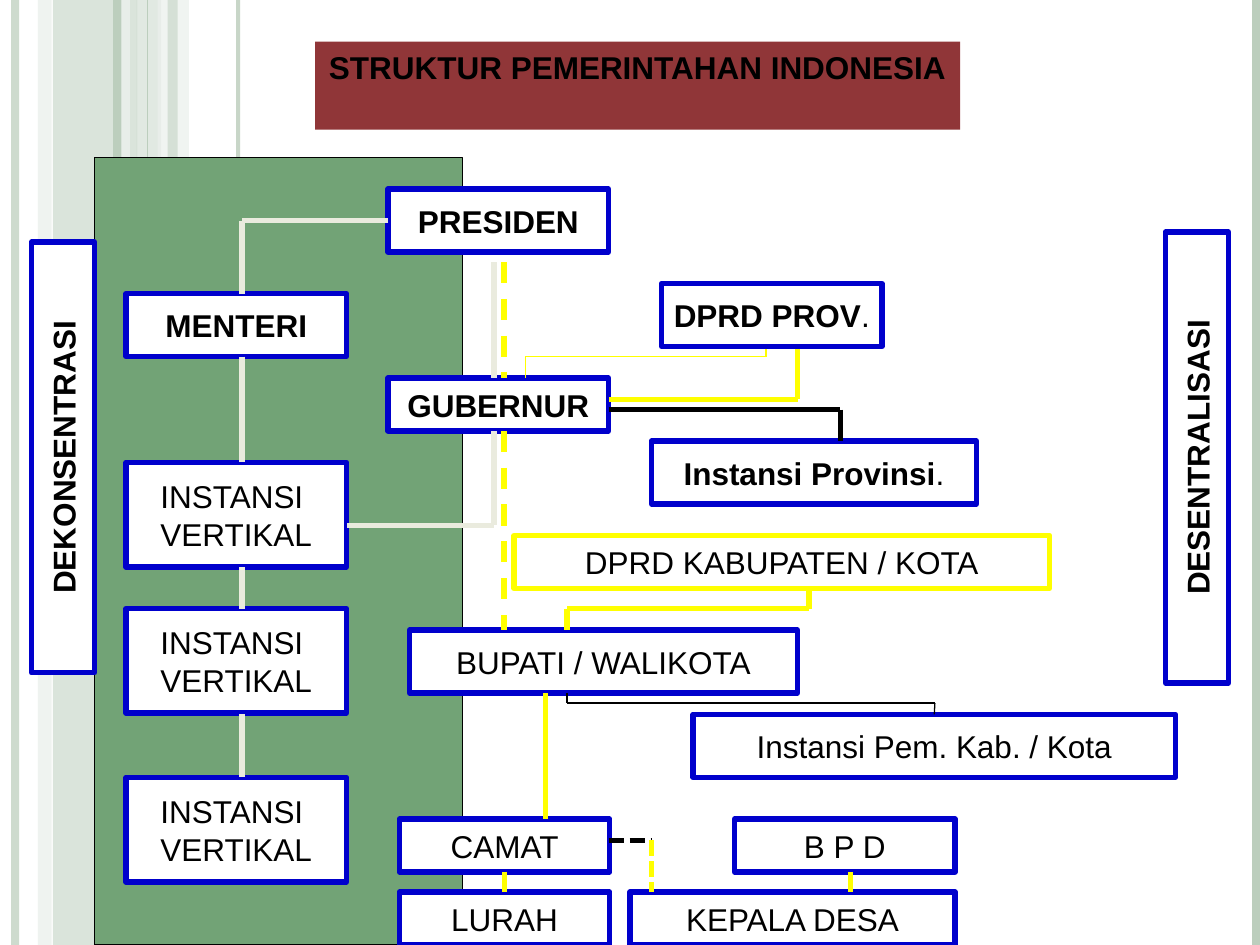
from itertools import pairwise
from typing import NamedTuple

from lxml.etree import SubElement
from pptx import Presentation
from pptx.dml.color import RGBColor
from pptx.enum.dml import MSO_LINE_DASH_STYLE as Dash
from pptx.enum.shapes import MSO_CONNECTOR as Connector, MSO_SHAPE as Shape
from pptx.enum.text import MSO_ANCHOR as Anchor, PP_ALIGN as Align
from pptx.oxml.ns import qn
from pptx.util import Inches, Pt

COLORS = {
    "sage": "BCCEBD", "light sage": "D5E0D6", "pale sage": "EBF0EC",
    "green": "72A376", "maroon": "903638", "blue": "0000CC",
    "yellow": "FFFF00", "cream": "EAEBDE", "white": "FFFFFF", "black": "000000",
}
TOP, LEFT, BOTTOM = 0, 1, 2
SLIDE_HEIGHT = 7.5


class Band(NamedTuple):
    left: float
    width: float
    color: str
    opacity: int


class Stripe(NamedTuple):
    x: float
    color: str
    weight: float = 4.5
    opacity: int = 100


class Box(NamedTuple):
    text: str
    left: float
    top: float
    width: float
    height: float = 0.5
    bold: bool = False
    border: str | None = "blue"
    fill: str = "white"
    rotation: int = 0
    weight: float = 3
    anchor: Anchor = Anchor.MIDDLE


class Route(NamedTuple):
    """A chain of straight connectors; start and end name a box and its side."""
    points: list
    color: str
    weight: float = 3
    dash: Dash | None = None
    start: tuple | None = None
    end: tuple | None = None


BANDS = [
    Band(0.42, 0.67, "sage", 54),
    Band(0.3, 0.11, "light sage", 36),
    Band(1.08, 0.2, "light sage", 70),
    Band(1.25, 0.25, "pale sage", 71),
]
STRIPES = [
    Stripe(0.12, "sage", opacity=73),
    Stripe(1, "pale sage", opacity=83),
    Stripe(0.93, "sage"),
    Stripe(1.89, "sage", 2.25, 82),
    Stripe(1.17, "sage", 0.75),
    Stripe(9.97, "sage"),
]
FRONT_BAND = Band(1.33, 0.08, "sage", 51)

BOXES = [
    Box("", 0.75, 1.25, 2.92, 6.25, border="black", fill="green", weight=0.75),
    Box("STRUKTUR PEMERINTAHAN INDONESIA", 2.5, 0.33, 5.12, 0.7, bold=True,
        border=None, fill="maroon", anchor=Anchor.TOP),
    Box("MENTERI", 1, 2.33, 1.75, bold=True),
    Box("Instansi Pem. Kab. / Kota", 5.5, 5.67, 3.83),
    *[Box("INSTANSI \nVERTIKAL", 1, top, 1.75, 0.83) for top in (3.67, 4.83, 6.17)],
    Box("PRESIDEN", 3.08, 1.5, 1.75, bold=True),
    Box("GUBERNUR", 3.08, 3, 1.75, 0.42, bold=True),
    Box("CAMAT", 3.17, 6.5, 1.67, 0.42),
    Box("LURAH", 3.17, 7.08, 1.67, 0.42),
    Box("DEKONSENTRASI", -1.21, 3.38, 3.42, bold=True, rotation=270),
    Box("Instansi Provinsi.", 5.17, 3.5, 2.58, bold=True),
    Box("B P D", 5.83, 6.5, 1.75, 0.42),
    Box("BUPATI / WALIKOTA", 3.25, 5, 3.08),
    Box("DESENTRALISASI", 7.71, 3.38, 3.58, bold=True, rotation=270),
    Box("KEPALA DESA", 5, 7.08, 2.58, 0.42),
]
FRONT_BOXES = [
    Box("DPRD KABUPATEN / KOTA", 4.08, 4.25, 4.25, 0.42, border="yellow"),
    Box("DPRD PROV.", 5.25, 2.25, 1.75, bold=True),
]
ROUTES = [
    Route([(3.08, 1.75), (1.92, 1.75), (1.92, 2.33)], "cream", start=("PRESIDEN", LEFT)),
    *[Route([(1.92, top), (1.92, bottom)], "cream")
      for top, bottom in ((2.83, 3.67), (4.5, 4.83), (5.67, 6.17))],
    Route([(3.92, 2.08), (3.92, 3)], "cream"),
    Route([(3.92, 3.42), (3.92, 4.17), (2.75, 4.17)], "cream"),
    Route([(6.33, 2.75), (6.33, 3.17), (4.83, 3.17)], "yellow"),
    Route([(6.08, 2.75), (6.08, 2.83), (4.17, 2.83), (4.17, 3)], "yellow", 0.75),
    Route([(4.83, 3.25), (6.67, 3.25), (6.67, 3.5)], "black"),
    Route([(6.42, 4.67), (6.42, 4.83), (4.5, 4.83), (4.5, 5)], "yellow"),
    Route([(4, 6.92), (4, 7.08)], "yellow", start=("CAMAT", BOTTOM), end=("LURAH", TOP)),
    Route([(4.5, 5.5), (4.5, 5.58), (7.42, 5.58), (7.42, 5.67)], "black", 0.75,
          end=("Instansi Pem. Kab. / Kota", TOP)),
    Route([(6.75, 6.92), (6.75, 7.08)], "yellow"),
    Route([(4.83, 6.67), (5.17, 6.67)], "black", dash=Dash.SQUARE_DOT),
    Route([(5.17, 6.67), (5.17, 7.08)], "yellow", dash=Dash.SQUARE_DOT),
    Route([(4.33, 5.5), (4.33, 6.5)], "yellow"),
    Route([(4, 2.08), (4, 3)], "yellow", dash=Dash.DASH),
    Route([(4, 3.42), (4, 5)], "yellow", dash=Dash.DASH),
]


def rgb(name: str) -> RGBColor:
    return RGBColor.from_string(COLORS[name])


def apply_format(target, values: dict) -> None:
    for name, value in values.items():
        setattr(target, name, value)


def set_opacity(shape, percent: int) -> None:
    for color in shape._element.spPr.iter(qn("a:srgbClr")):
        SubElement(color, qn("a:alpha"), val=str(percent * 1000))


def add_rectangle(slide, left: float, top: float, width: float, height: float, fill: str):
    shape = slide.shapes.add_shape(
        Shape.RECTANGLE, Inches(left), Inches(top), Inches(width), Inches(height))
    shape.shadow.inherit = False
    shape.fill.solid()
    shape.fill.fore_color.rgb = rgb(fill)
    shape.line.fill.background()
    return shape


def add_line(slide, start: tuple, end: tuple, color: str, weight: float):
    line = slide.shapes.add_connector(
        Connector.STRAIGHT, *[Inches(value) for value in (*start, *end)])
    line.line.color.rgb = rgb(color)
    line.line.width = Pt(weight)
    SubElement(line._element.spPr, qn("a:effectLst"))
    return line


def add_band(slide, band: Band) -> None:
    shape = add_rectangle(slide, band.left, 0, band.width, SLIDE_HEIGHT, band.color)
    set_opacity(shape, band.opacity)


def add_stripe(slide, stripe: Stripe) -> None:
    line = add_line(slide, (stripe.x, 0), (stripe.x, SLIDE_HEIGHT), stripe.color, stripe.weight)
    if stripe.opacity < 100:
        set_opacity(line, stripe.opacity)


def add_box(slide, box: Box):
    shape = add_rectangle(slide, box.left, box.top, box.width, box.height, box.fill)
    shape.rotation = box.rotation
    if box.border:
        shape.line.color.rgb = rgb(box.border)
        shape.line.width = Pt(box.weight)
    if box.text:
        add_text(shape.text_frame, box)
    return shape


def add_text(frame, box: Box) -> None:
    """Centre the lines of a box; a closing full stop is never bold."""
    apply_format(frame, {"word_wrap": False, "vertical_anchor": box.anchor})
    frame.text = box.text
    for paragraph in frame.paragraphs:
        paragraph.alignment = Align.CENTER
        if box.text.endswith("."):
            paragraph.runs[0].text = box.text[:-1]
            paragraph.add_run().text = "."
        for run in paragraph.runs:
            apply_format(run.font, {"name": "Arial", "size": Pt(18),
                                    "bold": box.bold and run.text != "."})
            run.font.color.rgb = rgb("black")


def add_route(slide, route: Route, shapes: dict) -> None:
    lines = [add_line(slide, start, end, route.color, route.weight)
             for start, end in pairwise(route.points)]
    for line in lines:
        line.line.dash_style = route.dash
    if route.start:
        name, side = route.start
        lines[0].begin_connect(shapes[name], side)
    if route.end:
        name, side = route.end
        lines[-1].end_connect(shapes[name], side)


def main() -> None:
    presentation = Presentation()
    presentation.slide_width, presentation.slide_height = Inches(10), Inches(SLIDE_HEIGHT)
    slide = presentation.slides.add_slide(presentation.slide_layouts[6])
    for band in BANDS:
        add_band(slide, band)
    for stripe in STRIPES:
        add_stripe(slide, stripe)
    add_band(slide, FRONT_BAND)
    shapes = {box.text: add_box(slide, box) for box in BOXES}
    for route in ROUTES:
        add_route(slide, route, shapes)
    for box in FRONT_BOXES:
        add_box(slide, box)
    presentation.save("out.pptx")


if __name__ == "__main__":
    main()
